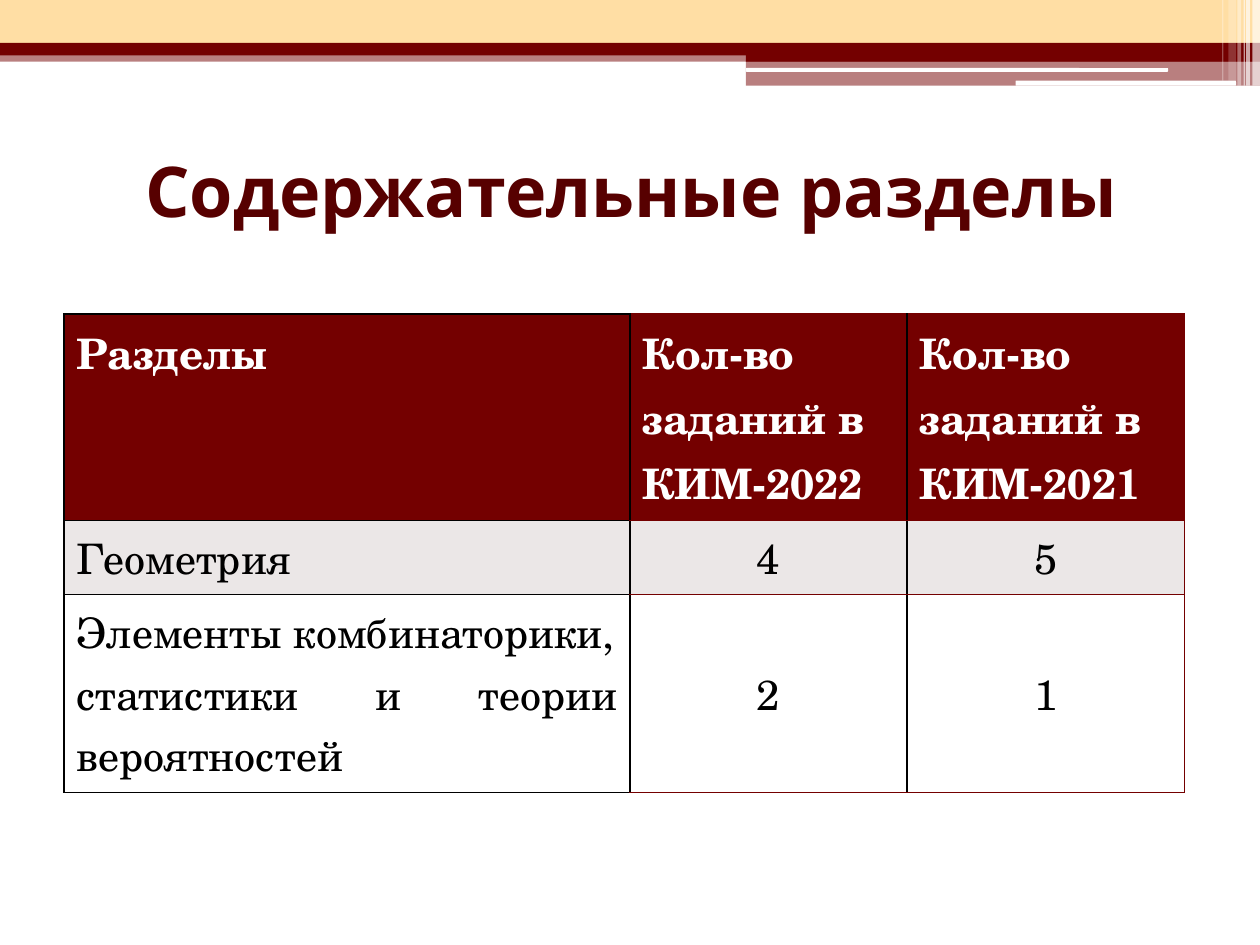
from lxml import etree
from pptx import Presentation
from pptx.dml.color import RGBColor
from pptx.enum.shapes import MSO_SHAPE
from pptx.enum.text import MSO_ANCHOR, PP_ALIGN
from pptx.oxml.ns import qn
from pptx.util import Inches, Pt

RECT, ROUND = MSO_SHAPE.RECTANGLE, MSO_SHAPE.ROUNDED_RECTANGLE
MIDDLE = MSO_ANCHOR.MIDDLE
LEFT, CENTER, JUSTIFY = PP_ALIGN.LEFT, PP_ALIGN.CENTER, PP_ALIGN.JUSTIFY

# Content
TITLE = "Содержательные разделы"
ROWS = [
    ["Разделы", "Кол-во\nзаданий в КИМ-2022", "Кол-во заданий в КИМ-2021"],
    ["Геометрия", "4", "5"],
    ["Элементы комбинаторики,\nстатистики и теории вероятностей", "2", "1"],
]

# Style
COLORS = {"maroon": "740000", "sand": "FFDEA4", "white": "FFFFFF",
          "black": "000000", "title": "570000", "band": "EBE7E7"}
TITLE_FONT, TABLE_FONT = "Karla", "TeX Gyre Schola"
ROW_FILLS = ["maroon", "band", "white"]
W, H = 10, 7.5
COL_WIDTHS = [4.49, 2.2, 2.2]
ROW_HEIGHTS = [1.64, 0.59, 1.57]
SPLIT = 5.92  # where the right half of the banner starts

# Banner: shape, left, top, width, height, colour, opacity in percent
BANNER = [
    (RECT, 0, 0.4, W, 0.09, "maroon", 50),
    (RECT, 0, 0, W, 0.34, "sand", 100),
    (RECT, 0, 0.34, W, 0.1, "maroon", 100),
    (RECT, SPLIT, 0.39, W - SPLIT, 0.1, "maroon", 100),
    (RECT, SPLIT, 0.48, W - SPLIT, 0.2, "maroon", 50),
    (ROUND, SPLIT, 0.54, 3.35, 0.03, "white", 100),
    (ROUND, 8.06, 0.64, 1.75, 0.04, "white", 100),
]
# Vertical stripes: left, width, height, opacity
STRIPES = [(9.94, 0.06, 0.68, 65), (9.89, 0.03, 0.68, 65), (9.87, 0.01, 0.68, 60),
           (9.82, 0.03, 0.68, 40), (9.75, 0.06, 0.64, 20), (9.7, 0.01, 0.64, 30)]
BANNER += [(RECT, x, 0, w, h, "white", a) for x, w, h, a in STRIPES]


def rgb(name):
    return RGBColor.from_string(COLORS[name])


def add_bar(slide, kind, x, y, w, h, color, opacity):
    sp = slide.shapes.add_shape(kind, Inches(x), Inches(y), Inches(w), Inches(h))
    sp.shadow.inherit = False
    sp.line.fill.background()
    sp.fill.solid()
    sp.fill.fore_color.rgb = rgb(color)
    if opacity < 100:
        clr = sp.fill._xPr.find(".//" + qn("a:srgbClr"))
        etree.SubElement(clr, qn("a:alpha"), val=str(opacity * 1000))


def write(tf, text, font, size, color, bold, align):
    tf.text = text
    for p in tf.paragraphs:
        p.alignment = align
        for r in p.runs:
            r.font.name, r.font.size, r.font.bold = font, Pt(size), bold
            r.font.color.rgb = rgb(color)


def set_borders(cell, sides):
    tcPr = cell._tc.get_or_add_tcPr()
    for i, (side, color) in enumerate(sides.items()):
        ln = etree.Element(qn("a:ln" + side), w=str(Pt(1)))
        fill = etree.SubElement(ln, qn("a:solidFill"))
        etree.SubElement(fill, qn("a:srgbClr"), val=COLORS[color])
        tcPr.insert(i, ln)


def main():
    prs = Presentation()
    prs.slide_width, prs.slide_height = Inches(W), Inches(H)
    slide = prs.slides.add_slide(prs.slide_layouts[6])

    for bar in BANNER:
        add_bar(slide, *bar)

    # Title
    tb = slide.shapes.add_textbox(Inches(0.51), Inches(0.92), Inches(9), Inches(1.17))
    tf = tb.text_frame
    tf.word_wrap = True
    tf.vertical_anchor = MIDDLE
    write(tf, TITLE, TITLE_FONT, 40, "title", True, CENTER)

    # Table
    table = slide.shapes.add_table(
        len(ROWS), len(COL_WIDTHS), Inches(0.51), Inches(2.49),
        Inches(sum(COL_WIDTHS)), Inches(sum(ROW_HEIGHTS))).table
    for col, w in zip(table.columns, COL_WIDTHS):
        col.width = Inches(w)
    for row, h in zip(table.rows, ROW_HEIGHTS):
        row.height = Inches(h)
    for i, row in enumerate(ROWS):
        for j, text in enumerate(row):
            cell, head, number = table.cell(i, j), i == 0, i > 0 and j > 0
            cell.fill.solid()
            cell.fill.fore_color.rgb = rgb(ROW_FILLS[i])
            if number:
                cell.vertical_anchor = MIDDLE
            align = LEFT if head else CENTER if number else JUSTIFY
            write(cell.text_frame, text, TABLE_FONT, 24,
                  "white" if head else "black", head, align)
            edge = "maroon" if j else "black"
            last = j == len(row) - 1
            set_borders(cell, {"L": "black", "R": "maroon" if last else "black",
                               "T": edge, "B": edge})

    prs.save("out.pptx")


if __name__ == "__main__":
    main()
